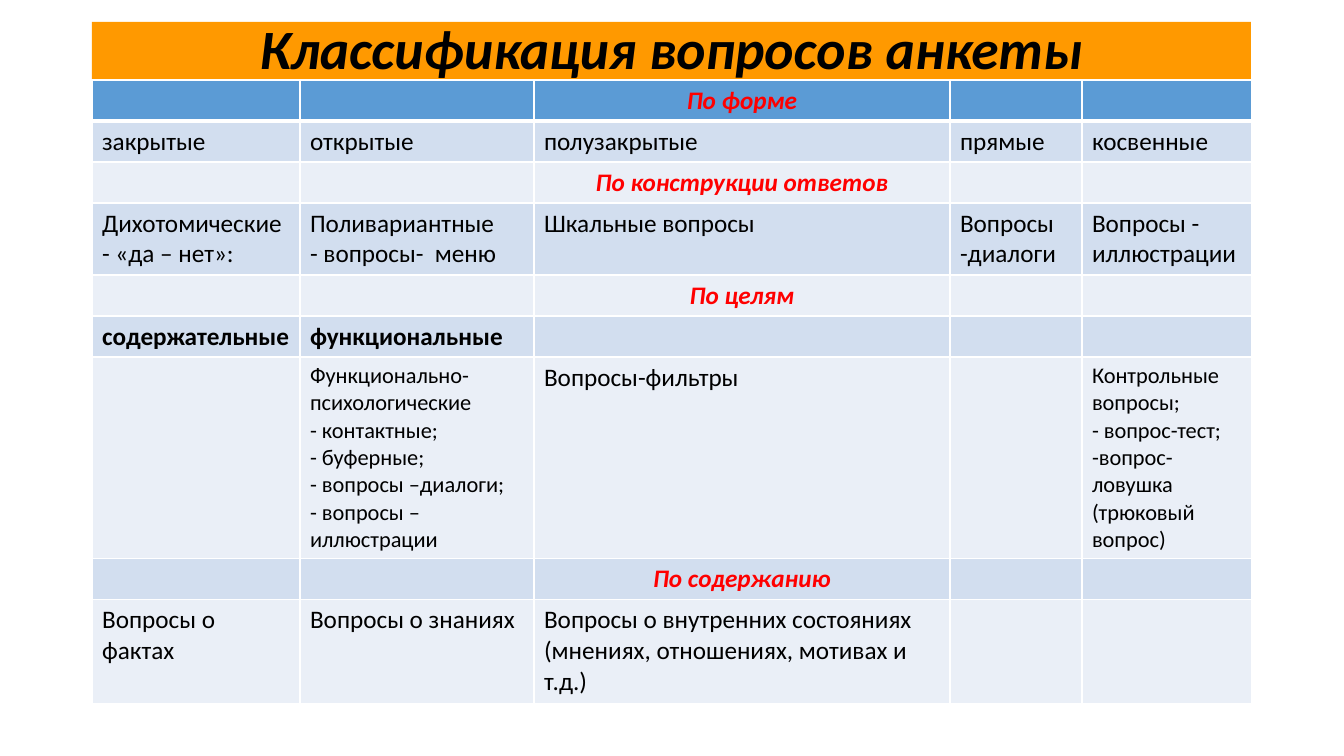
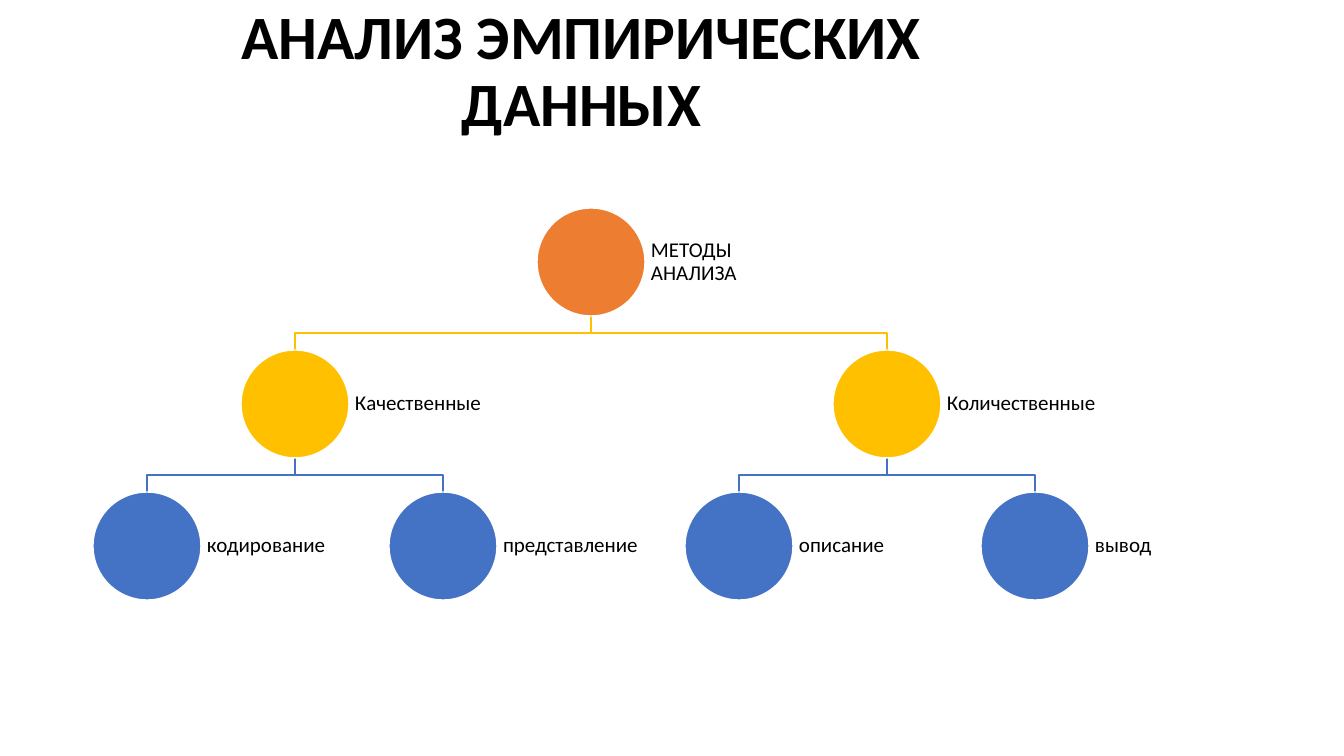
from lxml import etree
from pptx import Presentation
from pptx.dml.color import RGBColor
from pptx.enum.shapes import MSO_SHAPE
from pptx.enum.text import MSO_ANCHOR, MSO_AUTO_SIZE, PP_ALIGN
from pptx.oxml.ns import qn
from pptx.util import Emu, Pt

OVAL = MSO_SHAPE.OVAL
MIDDLE = MSO_ANCHOR.MIDDLE
LEFT, CENTER = PP_ALIGN.LEFT, PP_ALIGN.CENTER
NO_AUTOFIT = MSO_AUTO_SIZE.NONE
TITLE_ONLY = 5

FONT = "Calibri"
BLACK, WHITE, RED = "000000", "FFFFFF", "FF0000"
TITLE_BAND = "FF9900"
HEADER, DARK_BAND, LIGHT_BAND = "5B9BD5", "D2DEEF", "EAEFF7"
LEVEL_COLOURS = ["ED7D31", "FFC000", "4472C4"]

# Text styles of table cells
PLAIN = {"size": 18}
SMALL = {"size": 16}
STRONG = {"size": 18, "bold": True}
HEADING = {"size": 18, "bold": True, "italic": True, "colour": RED, "align": CENTER}


def px(length):
    return Emu(round(length * 914400 / 100.8))


def rgb(value):
    return RGBColor.from_string(value)


class Deck:
    def __init__(self, width, height):
        self.presentation = Presentation()
        self.presentation.slide_width = px(width)
        self.presentation.slide_height = px(height)
        self.slide = None

    def add_slide(self):
        layout = self.presentation.slide_layouts[TITLE_ONLY]
        self.slide = self.presentation.slides.add_slide(layout)

    def format_text(self, text_frame, size, bold=False, italic=False,
                    colour=BLACK, align=LEFT, spacing=None):
        for paragraph in text_frame.paragraphs:
            paragraph.alignment = align
            paragraph.line_spacing = spacing
            font = paragraph.font
            font.name, font.size = FONT, Pt(size)
            font.bold, font.italic = bold, italic
            font.color.rgb = rgb(colour)

    def title(self, text, box, size, italic=False, fill=None):
        shape = self.slide.shapes.title
        shape.left, shape.top, shape.width, shape.height = map(px, box)
        if fill:
            shape.fill.solid()
            shape.fill.fore_color.rgb = rgb(fill)
        frame = shape.text_frame
        frame.text = text
        frame.auto_size = NO_AUTOFIT
        frame.vertical_anchor = MIDDLE
        self.format_text(frame, size, True, italic, align=CENTER, spacing=0.9)

    def table(self, left, top, widths, rows):
        heights = [height for height, _ in rows]
        frame = self.slide.shapes.add_table(
            len(rows), len(widths), px(left), px(top), px(sum(widths)), px(sum(heights)))
        table = frame.table
        for column, width in zip(table.columns, widths):
            column.width = px(width)
        for index, (height, cells) in enumerate(rows):
            table.rows[index].height = px(height)
            band = HEADER if index == 0 else DARK_BAND if index % 2 else LIGHT_BAND
            for cell, (text, style) in zip(table.rows[index].cells, cells):
                cell.fill.solid()
                cell.fill.fore_color.rgb = rgb(band)
                cell.text_frame.text = text
                self.format_text(cell.text_frame, **style)
                self.cell_borders(cell, top=3 if index == 1 else 1,
                                  bottom=3 if index == 0 else 1)

    def cell_borders(self, cell, top, bottom):
        properties = cell._tc.get_or_add_tcPr()
        sides = [("a:lnL", 1), ("a:lnR", 1), ("a:lnT", top), ("a:lnB", bottom)]
        for position, (tag, points) in enumerate(sides):
            line = etree.Element(qn(tag), w=str(Pt(points)))
            fill = etree.SubElement(line, qn("a:solidFill"))
            etree.SubElement(fill, qn("a:srgbClr"), val=WHITE)
            properties.insert(position, line)

    def branch(self, start, end, colour):
        (x1, y1), (x2, y2) = start, end
        middle = (y1 + y2) // 2
        points = [(px(x), px(y)) for x, y in [(x1, middle), (x2, middle), (x2, y2)]]
        builder = self.slide.shapes.build_freeform(px(x1), px(y1))
        builder.add_line_segments(points, close=False)
        shape = builder.convert_to_shape()
        shape.shadow.inherit = False
        shape.fill.background()
        shape.line.color.rgb = rgb(colour)
        shape.line.width = Pt(1)

    def node(self, x, y, radius, text, colour):
        top, size = px(y - radius), px(2 * radius)
        circle = self.slide.shapes.add_shape(OVAL, px(x - radius), top, size, size)
        circle.shadow.inherit = False
        circle.fill.solid()
        circle.fill.fore_color.rgb = rgb(colour)
        circle.line.color.rgb = rgb(WHITE)
        circle.line.width = Pt(1)
        label = self.slide.shapes.add_textbox(px(x + radius), top, px(161), size)
        frame = label.text_frame
        frame.word_wrap = True
        frame.vertical_anchor = MIDDLE
        frame.margin_left, frame.margin_right = px(6), 0
        frame.text = text
        self.format_text(frame, 15, spacing=0.9)


def cells(*texts, style=PLAIN):
    texts += ("",) * (5 - len(texts))
    return [(text, style) for text in texts]


def heading(text):
    return 41, cells("", "", text, style=HEADING)


def build_classification(deck):
    deck.add_slide()
    deck.title("Классификация вопросов анкеты", (92, 22, 1159, 59), 39.6,
               italic=True, fill=TITLE_BAND)
    functional = ("Функционально-психологические\n- контактные;\n- буферные;\n"
                  "- вопросы –диалоги;\n- вопросы – иллюстрации")
    control = "Контрольные вопросы;\n- вопрос-тест;\n-вопрос-ловушка (трюковый вопрос)"
    deck.table(92, 80, [208, 234, 416, 132, 170], [
        heading("По форме"),
        (41, cells("закрытые", "открытые", "полузакрытые", "прямые", "косвенные")),
        heading("По конструкции ответов"),
        (72, cells("Дихотомические\n- «да – нет»:", "Поливариантные\n- вопросы-  меню",
                   "Шкальные вопросы", "Вопросы -диалоги", "Вопросы - иллюстрации")),
        heading("По целям"),
        (41, cells("содержательные", "функциональные", style=STRONG)),
        (201, [("", PLAIN), (functional, SMALL), ("Вопросы-фильтры", PLAIN),
               ("", PLAIN), (control, SMALL)]),
        heading("По содержанию"),
        (104, cells("Вопросы о фактах", "Вопросы о знаниях",
                    "Вопросы о внутренних состояниях (мнениях, отношениях, мотивах и т.д.)")),
    ])


def build_analysis(deck):
    deck.add_slide()
    deck.title("АНАЛИЗ ЭМПИРИЧЕСКИХ ДАННЫХ", (109, 33, 945, 80), 44)
    levels = [
        ["МЕТОДЫ АНАЛИЗА"],
        ["Качественные", "Количественные"],
        ["кодирование", "представление", "описание", "вывод"],
    ]
    radius, first_x, leaf_step, first_y, level_step = 54, 147, 296, 262, 142

    # Each parent stands midway above its two children
    def centre(level, index):
        span = 2 ** (len(levels) - 1 - level)
        x = first_x + leaf_step * index * span + leaf_step * (span - 1) // 2
        return x, first_y + level_step * level

    # Branches lie behind the circles
    for level in range(1, len(levels)):
        for index in range(len(levels[level])):
            parent_x, parent_y = centre(level - 1, index // 2)
            x, y = centre(level, index)
            deck.branch((parent_x, parent_y + radius), (x, y - radius), LEVEL_COLOURS[level])
    for level, names in enumerate(levels):
        for index, name in enumerate(names):
            deck.node(*centre(level, index), radius, name, LEVEL_COLOURS[level])


def main():
    deck = Deck(1344, 756)
    build_classification(deck)
    build_analysis(deck)
    deck.presentation.save("out.pptx")


if __name__ == "__main__":
    main()
